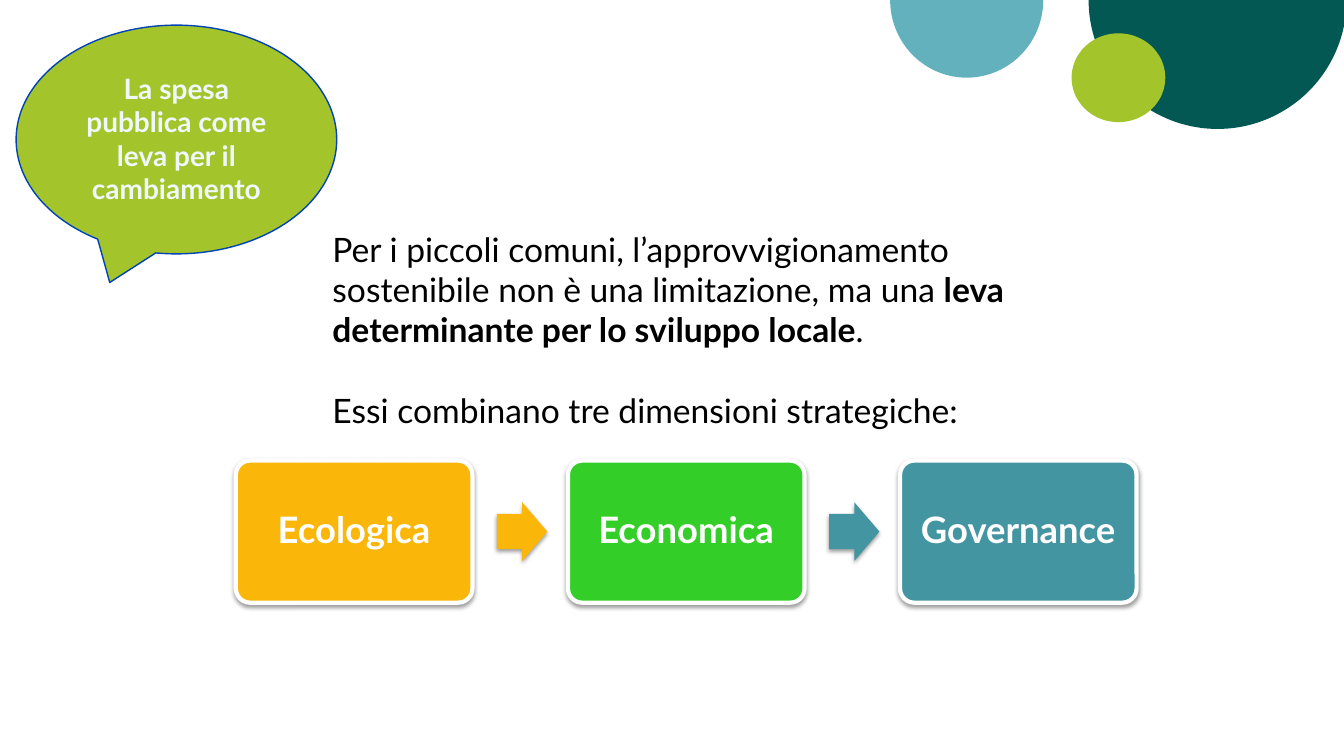
from lxml import etree
from pptx import Presentation
from pptx.dml.color import RGBColor
from pptx.enum.shapes import MSO_SHAPE as SHAPE
from pptx.enum.text import MSO_ANCHOR as ANCHOR, MSO_AUTO_SIZE as AUTO, PP_ALIGN as ALIGN
from pptx.oxml.ns import qn
from pptx.util import Pt

FONT = "Lato"
GREEN = "A3C42A"
WHITE = "FFFFFF"
STEPS = [("Ecologica", "FAB609"), ("Economica", "33CE27"), ("Governance", "4495A2")]
STEP_LEFT, STEP_TOP, STEP_W, STEP_H, STEP_PITCH = 168.5, 329, 169, 101.5, 237.2
ARROW_OFFSET, ARROW_W, ARROW_H = 186.5, 36, 42


def rgb(value):
    return RGBColor.from_string(value)


def style_runs(p, size, color, bold=False):
    for r in p.runs:
        r.font.name = FONT
        r.font.size = Pt(size)
        r.font.bold = bold
        r.font.color.rgb = rgb(color)


def add_shape(slide, kind, box, fill, line=None, width=1, adjustments=()):
    sp = slide.shapes.add_shape(kind, *map(Pt, box))
    sp.shadow.inherit = False
    sp.fill.solid()
    sp.fill.fore_color.rgb = rgb(fill)
    if line:
        sp.line.color.rgb = rgb(line)
        sp.line.width = Pt(width)
    else:
        sp.line.fill.background()
    for i, value in enumerate(adjustments):
        sp.adjustments[i] = value
    return sp


def add_shadow(sp):
    effects = sp._element.spPr.find(qn("a:effectLst"))
    shadow = etree.SubElement(effects, qn("a:outerShdw"), blurRad=str(Pt(3.1)),
                              dist=str(Pt(1.6)), dir="5400000", rotWithShape="0")
    color = etree.SubElement(shadow, qn("a:srgbClr"), val="000000")
    etree.SubElement(color, qn("a:alpha"), val="38000")


def add_title(slide, text, box):
    sp = slide.shapes.title
    sp.left, sp.top, sp.width, sp.height = map(Pt, box)
    tf = sp.text_frame
    tf.text = text
    tf.word_wrap = True
    tf.auto_size = AUTO.NONE
    tf.vertical_anchor = ANCHOR.MIDDLE
    p = tf.paragraphs[0]
    p.alignment = ALIGN.CENTER
    style_runs(p, 20, "F0F8FC", bold=True)


def add_message(slide, box):
    tf = slide.shapes.add_textbox(*map(Pt, box)).text_frame
    tf.word_wrap = True
    p = tf.paragraphs[0]
    for text in ("Per i piccoli comuni, l’approvvigionamento sostenibile non è una limitazione, ma una ",
                 "leva determinante per lo sviluppo locale", "."):
        p.add_run().text = text
    style_runs(p, 24, "000000")
    p.runs[1].font.bold = True
    p = tf.add_paragraph()
    p.text = "Essi combinano tre dimensioni strategiche:"
    p.space_before = Pt(28.8)
    style_runs(p, 24, "000000")


def add_step(slide, left, label, fill):
    sp = add_shape(slide, SHAPE.ROUNDED_RECTANGLE, (left, STEP_TOP, STEP_W, STEP_H),
                   fill, WHITE, 3, [0.1])
    add_shadow(sp)
    tf = sp.text_frame
    tf.text = label
    tf.word_wrap = True
    tf.vertical_anchor = ANCHOR.MIDDLE
    p = tf.paragraphs[0]
    p.alignment = ALIGN.CENTER
    p.line_spacing = 0.9
    style_runs(p, 26, WHITE, bold=True)


def add_step_arrow(slide, left, fill):
    top = STEP_TOP + (STEP_H - ARROW_H) / 2
    sp = add_shape(slide, SHAPE.RIGHT_ARROW, (left, top, ARROW_W, ARROW_H), fill,
                   adjustments=[0.6, 0.5])
    add_shadow(sp)


def main():
    prs = Presentation()
    prs.slide_width, prs.slide_height = Pt(960), Pt(540)
    slide = prs.slides.add_slide(prs.slide_layouts[5])

    half_circle = [0, 108]
    add_shape(slide, SHAPE.PIE, (777.6, -92.2, 184.3, 184.3), "035854", adjustments=half_circle)
    add_shape(slide, SHAPE.PIE, (635.8, -55.4, 109.4, 110.9), "64B1BE", adjustments=half_circle)
    add_shape(slide, SHAPE.OVAL, (765.4, 23.8, 67, 63.4), GREEN)

    callout = add_shape(slide, SHAPE.OVAL_CALLOUT, (11.5, 18, 229, 163.4), GREEN, "0043B5",
                        adjustments=[-0.208, 0.625])
    title = slide.shapes.title
    callout._element.addnext(title._element)
    add_title(slide, "La spesa pubblica come leva per il cambiamento", (45, 41, 162, 115.5))
    add_message(slide, (230.4, 159.8, 560, 152.6))

    arrow_fills = [STEPS[0][1], STEPS[2][1]]
    for i, (label, fill) in enumerate(STEPS):
        left = STEP_LEFT + i * STEP_PITCH
        add_step(slide, left, label, fill)
        if i < len(arrow_fills):
            add_step_arrow(slide, left + ARROW_OFFSET, arrow_fills[i])

    prs.save("out.pptx")


if __name__ == "__main__":
    main()
